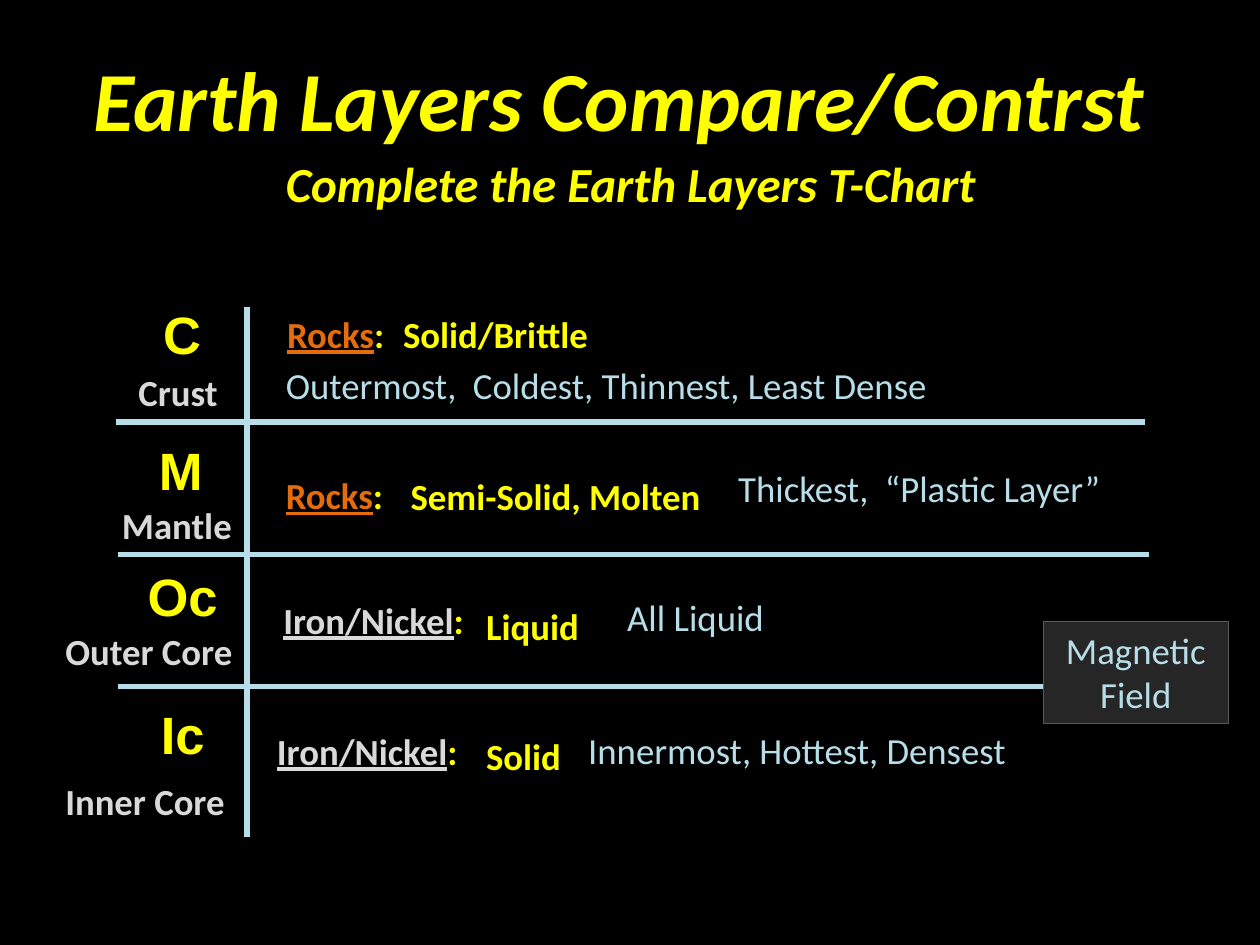
from lxml import etree
from pptx import Presentation, util as u
from pptx.dml.color import RGBColor
from pptx.enum import shapes, text
from pptx.oxml import ns

# Grid of 100 columns by 75 rows over a 10 x 7.5 inch slide
WIDTH, HEIGHT = u.Inches(10), u.Inches(7.5)
COLS, ROWS = 100, 75

COLORS = {
    "space": "000000", "yellow": "FFFF00", "rock": "E46C0A", "metal": "D9D9D9",
    "ice": "B7DEE8", "panel": "262626", "edge": "595959",
}

# Each part: wording, then left, top, width in grid units (symbols at SYMBOL_WIDTH)
LAYERS = [
    {"symbol": ("C", 14.45, 23.5), "name": ("Crust", 10, 27.1, 9.6),
     "material": ("Rocks", "rock", 21.8, 22.5, 11.3),
     "state": ("Solid/Brittle", 31, 22.5, 17.5),
     "traits": ("Outermost,  Coldest, Thinnest, Least Dense", 21.7, 28.3, 53.3)},
    {"symbol": ("M", 14.35, 34.3), "name": ("Mantle", 8.7, 37.7, 11.4),
     "material": ("Rocks", "rock", 21.7, 35.3, 10.1),
     "state": ("Semi-Solid, Molten", 31.6, 35.4, 27.8),
     "traits": ("Thickest,  “Plastic Layer”", 57.6, 36.5, 35.2)},
    {"symbol": ("Oc", 14.5, 44.3), "name": ("Outer Core", 4.2, 47.7, 16.3),
     "material": ("Iron/Nickel", "metal", 21.5, 45.2, 17.2),
     "state": ("Liquid", 37.6, 45.7, 10.4),
     "traits": ("All Liquid", 48.8, 46.7, 14.7)},
    {"symbol": ("Ic", 14.5, 55.2), "name": ("Inner Core", 4.2, 59.6, 16.3),
     "material": ("Iron/Nickel", "metal", 21, 55.6, 17.3),
     "state": ("Solid", 37.6, 56, 10.4),
     "traits": ("Innermost, Hottest, Densest", 45.7, 57.3, 35.6)},
]
SYMBOL_WIDTH = 9
RULES = [(9.2, 90.9), (9.4, 91.2), (9.4, 91.2)]  # left and right ends
RULE_TOP, RULE_STEP = 33.5, 10.5


def col(n):
    return int(WIDTH * n / COLS)


def row(n):
    return int(HEIGHT * n / ROWS)


def rgb(name):
    return RGBColor.from_string(COLORS[name])


def write(frame, runs, size, font="Calibri", bold=True, italic=False,
          centered=False, spacing=None):
    """Fill a text frame; runs are (wording, color, underlined)."""
    frame.word_wrap = True
    frame.auto_size = text.MSO_AUTO_SIZE.SHAPE_TO_FIT_TEXT
    line = frame.paragraphs[0]
    line.alignment = text.PP_ALIGN.CENTER if centered else text.PP_ALIGN.LEFT
    if spacing:
        line.line_spacing = spacing
    for wording, color, underlined in runs:
        run = line.add_run()
        run.text = wording
        run.font.name, run.font.size = font, u.Pt(size)
        run.font.bold, run.font.italic = bold, italic
        run.font.underline = underlined
        run.font.color.rgb = rgb(color)


def add_label(slide, left, top, width, height, runs, size, **style):
    box = slide.shapes.add_textbox(col(left), row(top), col(width), row(height))
    write(box.text_frame, runs, size, **style)


def add_rule(slide, x1, y1, x2, y2):
    rule = slide.shapes.add_connector(
        shapes.MSO_CONNECTOR.STRAIGHT, col(x1), row(y1), col(x2), row(y2))
    rule.line.color.rgb = rgb("ice")
    rule.line.width = u.Pt(3)
    etree.SubElement(rule._element.spPr, ns.qn("a:effectLst"))


def add_layer(slide, layer):
    wording, left, top = layer["symbol"]
    add_label(slide, left - SYMBOL_WIDTH / 2, top, SYMBOL_WIDTH, 6.1,
              [(wording, "yellow", False)], 30, font="Arial", centered=True)

    wording, left, top, width = layer["name"]
    add_label(slide, left, top, width, 6.3, [(wording, "metal", False)], 21, spacing=1.5)

    wording, color, left, top, width = layer["material"]
    add_label(slide, left, top, width, 6.3,
              [(wording, color, True), (":", "yellow", False)], 21, spacing=1.5)

    wording, left, top, width = layer["state"]
    add_label(slide, left, top, width, 6.3, [(wording, "yellow", False)], 21, spacing=1.5)

    wording, left, top, width = layer["traits"]
    add_label(slide, left, top, width, 4.5, [(wording, "ice", False)], 21, bold=False)


def add_magnetic_field(slide):
    panel = slide.shapes.add_shape(
        shapes.MSO_SHAPE.RECTANGLE, col(82.8), row(49.3), col(14.7), row(8.1))
    panel.shadow.inherit = False
    panel.fill.solid()
    panel.fill.fore_color.rgb = rgb("panel")
    panel.line.color.rgb = rgb("edge")
    panel.line.width = u.Pt(0.75)
    write(panel.text_frame, [("Magnetic Field", "ice", False)], 21,
          bold=False, centered=True)


def main():
    deck = Presentation()
    deck.slide_width, deck.slide_height = WIDTH, HEIGHT
    slide = deck.slides.add_slide(deck.slide_layouts[6])
    slide.background.fill.solid()
    slide.background.fill.fore_color.rgb = rgb("space")

    # T-chart rules
    for i, (left, right) in enumerate(RULES):
        y = RULE_TOP + i * RULE_STEP
        add_rule(slide, right, y, left, y)
    add_rule(slide, 19.6, 66.4, 19.6, 24.4)

    # Chart content
    for layer in LAYERS:
        add_layer(slide, layer)
    add_magnetic_field(slide)

    # Headings
    add_label(slide, 3.3, 3.3, 91.7, 9.1,
              [("Earth Layers Compare/Contrst", "yellow", False)], 48,
              italic=True, centered=True)
    add_label(slide, 4.2, 11.7, 91.7, 5.7,
              [("Complete the Earth Layers T-Chart", "yellow", False)], 28,
              italic=True, centered=True)

    deck.save("out.pptx")


if __name__ == "__main__":
    main()
